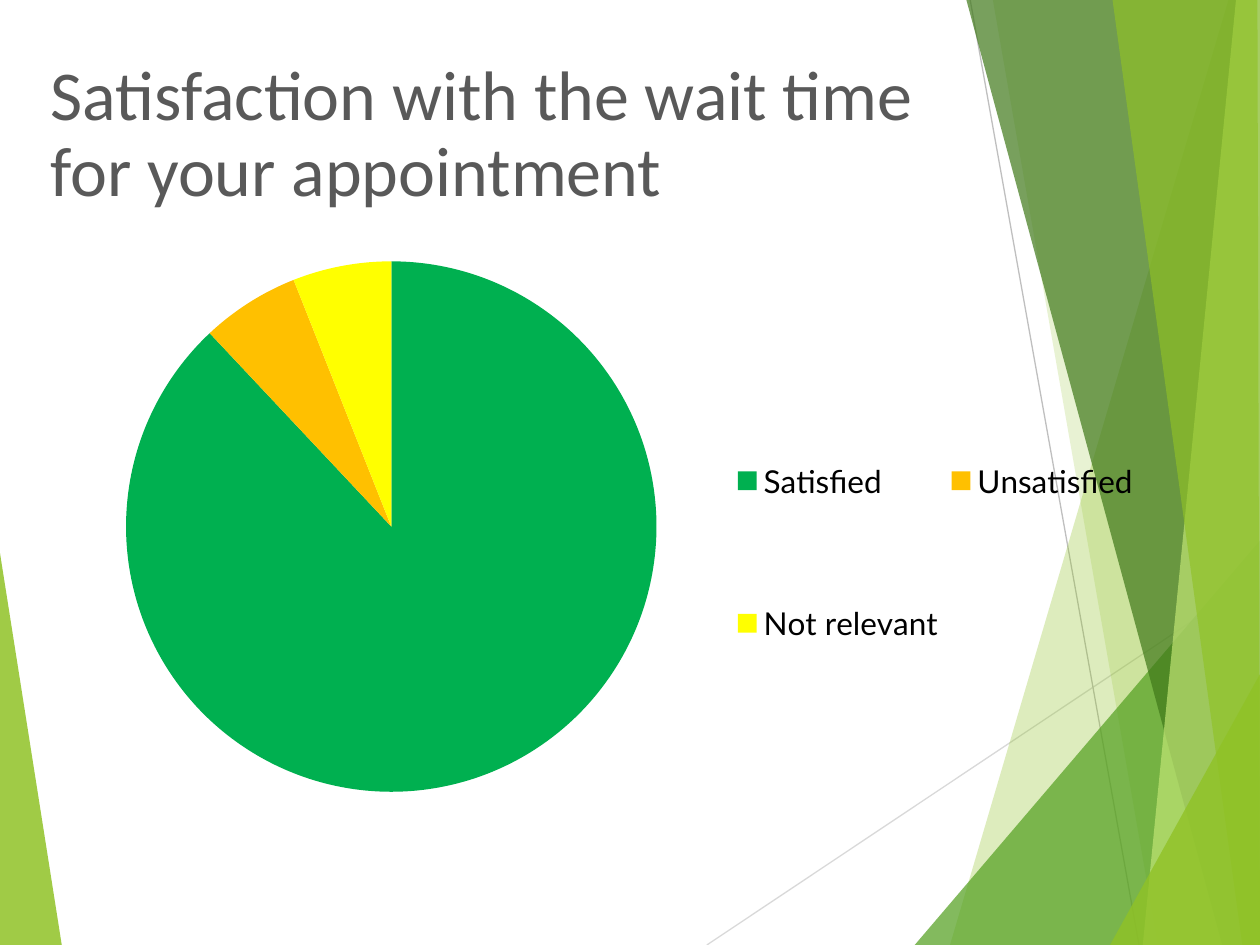
from lxml import etree
from pptx import Presentation
from pptx.chart.data import CategoryChartData
from pptx.dml.color import RGBColor
from pptx.enum.chart import XL_CHART_TYPE as ChartType, XL_LEGEND_POSITION as LegendPos
from pptx.enum.shapes import MSO_CONNECTOR as Connector
from pptx.enum.text import MSO_ANCHOR as Anchor, PP_ALIGN as Align
from pptx.oxml.ns import qn
from pptx.util import Inches, Pt

COLORS = {
    "lime": "90C226", "green": "54A021", "forest": "3F7819", "pale": "C0E474",
    "light_line": "D9D9D9", "gray_line": "BFBFBF", "title": "595959", "text": "000000",
    "satisfied": "00B050", "unsatisfied": "FFC000", "not_relevant": "FFFF00",
}
WIDTH, HEIGHT = 10, 7.5

# Facets from back to front: colour, opacity in percent, corners
LEFT_FACET = ("lime", 85, [(0, 4.39), (0.49, HEIGHT), (0, HEIGHT)])
RIGHT_FACETS = [
    ("lime", 30, [(9.75, 0), (7.54, HEIGHT), (WIDTH, HEIGHT), (WIDTH, 0)]),
    ("lime", 20, [(7.88, 0), (9.19, HEIGHT), (WIDTH, HEIGHT), (WIDTH, 0)]),
    ("green", 72, [(7.26, HEIGHT), (WIDTH, 4.29), (WIDTH, HEIGHT)]),
    ("forest", 70, [(7.67, 0), (9.7, HEIGHT), (WIDTH, HEIGHT), (WIDTH, 0)]),
    ("pale", 70, [(9.81, 0), (9.07, HEIGHT), (WIDTH, HEIGHT), (WIDTH, 0)]),
    ("lime", 65, [(8.83, 0), (9.86, HEIGHT), (WIDTH, HEIGHT), (9.98, 0)]),
    ("lime", 80, [(8.81, HEIGHT), (WIDTH, 5.35), (WIDTH, HEIGHT)]),
]
LINES = [
    ("light_line", (5.61, HEIGHT), (WIDTH, 4.57)),
    ("gray_line", (7.7, 0), (9.04, HEIGHT)),
]
ANSWERS = [
    ("Satisfied", 88, "satisfied"),
    ("Unsatisfied", 6, "unsatisfied"),
    ("Not relevant", 6, "not_relevant"),
]


class SlideBuilder:
    title_font, chart_font = "Calibri", "Lato"

    def __init__(self, page):
        self.page = page

    def color(self, name):
        return RGBColor.from_string(COLORS[name])

    def facet(self, color, opacity, corners):
        points = [(Inches(x), Inches(y)) for x, y in corners]
        builder = self.page.shapes.build_freeform(*points[0], scale=1.0)
        builder.add_line_segments(points[1:], close=True)
        shape = builder.convert_to_shape()
        shape.shadow.inherit = False
        shape.fill.solid()
        shape.fill.fore_color.rgb = self.color(color)
        shape.line.fill.background()
        fill_color = shape._element.spPr.find(f"{qn('a:solidFill')}/{qn('a:srgbClr')}")
        etree.SubElement(fill_color, qn("a:alpha"), val=str(opacity * 1000))

    def line(self, color, start, end):
        ends = [Inches(value) for value in (*start, *end)]
        line = self.page.shapes.add_connector(Connector.STRAIGHT, *ends)
        line.line.color.rgb = self.color(color)
        line.line.width = Pt(0.75)
        etree.SubElement(line._element.spPr, qn("a:effectLst"))

    def title(self, text, left, top, width, height):
        box = self.page.shapes.title
        box.left, box.top = Inches(left), Inches(top)
        box.width, box.height = Inches(width), Inches(height)
        frame = box.text_frame
        frame.text = text
        frame.word_wrap = True
        frame.vertical_anchor = Anchor.MIDDLE
        para = frame.paragraphs[0]
        para.alignment = Align.LEFT
        para.line_spacing = 0.9
        font = para.runs[0].font
        font.name, font.size = self.title_font, Pt(40)
        font.color.rgb = self.color("title")

    def place(self, part, index, **fractions):
        """Give a chart part a fixed place, in fractions of the chart."""
        for old in part.findall(qn("c:layout")):
            part.remove(old)
        layout = etree.Element(qn("c:layout"))
        manual = etree.SubElement(layout, qn("c:manualLayout"))
        if part.tag == qn("c:plotArea"):
            etree.SubElement(manual, qn("c:layoutTarget"), val="inner")
        for axis in ("x", "y"):
            etree.SubElement(manual, qn(f"c:{axis}Mode"), val="edge")
        for key in ("x", "y", "w", "h"):
            etree.SubElement(manual, qn(f"c:{key}"), val=str(fractions[key]))
        part.insert(index, layout)

    def pie(self, answers, left, top, width, height):
        data = CategoryChartData()
        data.categories = [label for label, _, _ in answers]
        data.add_series("Series 1", [value for _, value, _ in answers])
        frame = self.page.shapes.add_chart(
            ChartType.PIE, Inches(left), Inches(top), Inches(width), Inches(height), data)
        chart = frame.chart
        chart.has_title = False
        chart.font.name, chart.font.size = self.chart_font, Pt(18)
        chart.font.color.rgb = self.color("text")
        plot = chart.plots[0]
        plot.vary_by_categories = True
        for index, (_, _, color) in enumerate(answers):
            point = plot.series[0].points[index].format
            point.fill.solid()
            point.fill.fore_color.rgb = self.color(color)
            point.line.fill.background()

        # Legend to the right of the pie
        chart.has_legend = True
        chart.legend.position = LegendPos.RIGHT
        chart.legend.include_in_layout = False
        root = chart._chartSpace.find(qn("c:chart"))
        self.place(root.find(qn("c:plotArea")), 0, x=0.2, y=0.03, w=0.42, h=0.94)
        self.place(root.find(qn("c:legend")), 1, x=0.67, y=0.2, w=0.33, h=0.69)


def main():
    deck = Presentation()
    deck.slide_width, deck.slide_height = Inches(WIDTH), Inches(HEIGHT)
    builder = SlideBuilder(deck.slides.add_slide(deck.slide_layouts[5]))

    # Background decoration
    builder.facet(*LEFT_FACET)
    for line in LINES:
        builder.line(*line)
    for facet in RIGHT_FACETS:
        builder.facet(*facet)

    # Content
    builder.title("Satisfaction with the wait time for your appointment", 0.3, 0.36, 7.8, 1.44)
    builder.pie(ANSWERS, -1.06, 1.94, 10.16, 4.48)
    deck.save("out.pptx")


if __name__ == "__main__":
    main()
